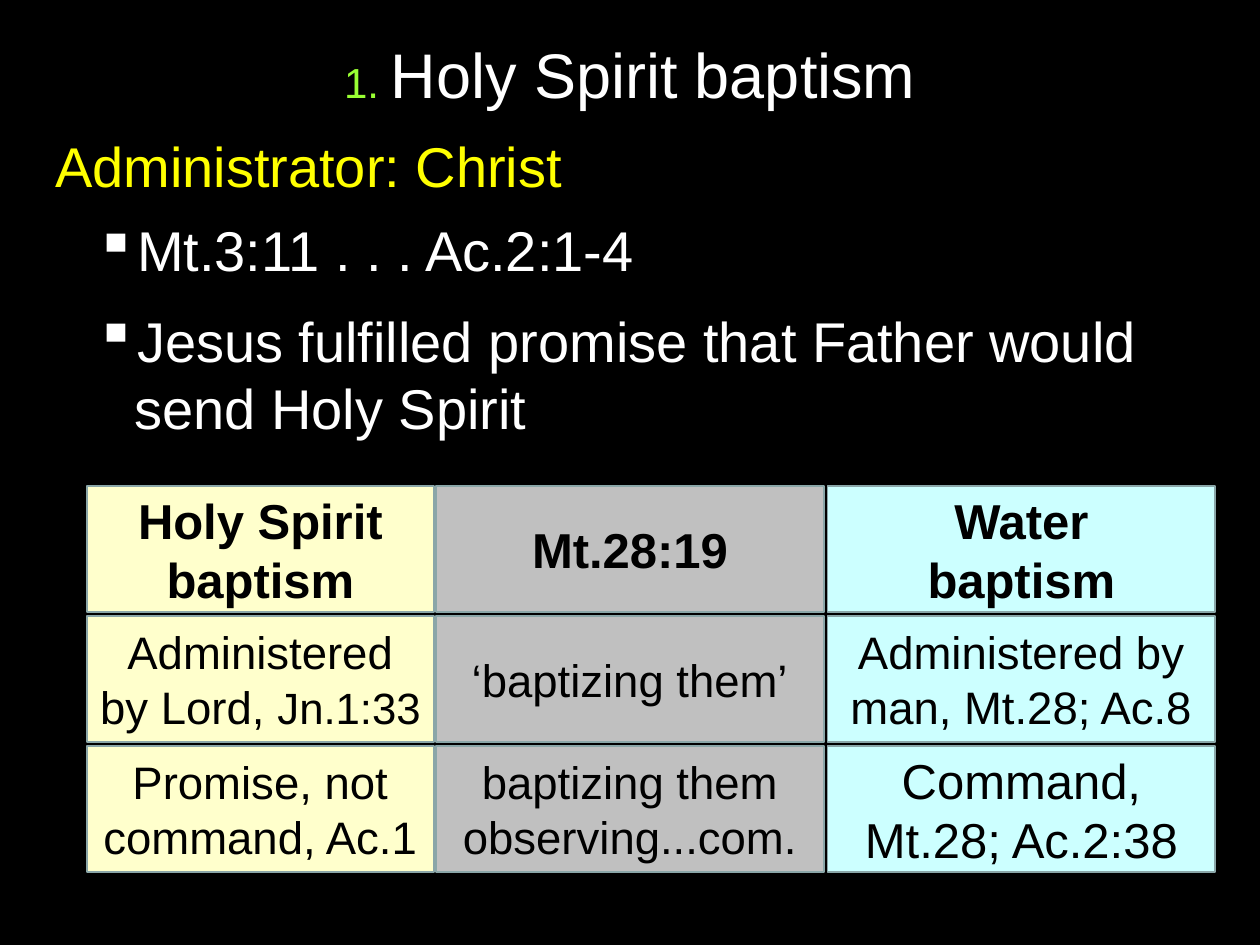
"""Build a slide on Holy Spirit baptism compared with water baptism."""
from lxml import etree
from pptx import Presentation
from pptx.dml.color import RGBColor
from pptx.enum.shapes import MSO_SHAPE
from pptx.enum.text import MSO_ANCHOR, PP_ALIGN
from pptx.oxml.ns import qn
from pptx.util import Cm, Pt

RECT = MSO_SHAPE.RECTANGLE
MIDDLE, TOP = MSO_ANCHOR.MIDDLE, MSO_ANCHOR.TOP
CENTER, LEFT = PP_ALIGN.CENTER, PP_ALIGN.LEFT

BLACK, WHITE, YELLOW, GREEN = "000000", "FFFFFF", "FFFF00", "99FF33"
BORDER = "8AA6A8"
COLUMNS = [(1.75, 7, "FFFFCC"), (8.79, 7.82, "C0C0C0"), (16.68, 7.82, "CCFFFF")]
FIRST_ROW, ROW_STEP, ROW_HEIGHT = 9.8, 2.62, 2.54

HEAD = {"size": Pt(28), "bold": True}
CELL = {"size": Pt(26)}
ROWS = [
    [[[("Holy Spirit baptism", HEAD)]],
     [[("Mt.28:19", HEAD)]],
     [[("Water\vbaptism", HEAD)]]],
    [[[("Administered by Lord, ", CELL), ("Jn.1:33", {"size": Pt(25)})]],
     [[("‘baptizing them’", CELL)]],
     [[("Administered by man, Mt.28; Ac.8", CELL)]]],
    [[[("Promise, not command, Ac.1", CELL)]],
     [[("baptizing them", CELL)], [("observing...com.", CELL)]],
     [[("Command, Mt.28; Ac.2:38", {"size": Pt(28)})]]],
]


def rgb(value):
    return RGBColor.from_string(value)


class Deck:
    def __init__(self, prs, font="Arial"):
        self.font = font
        self.s = prs.slides.add_slide(prs.slide_layouts[6])

    def background(self, color):
        fill = self.s.background.fill
        fill.solid()
        fill.fore_color.rgb = rgb(color)

    def add_runs(self, p, runs, color):
        for text, fmt in runs:
            for i, part in enumerate(text.split("\v")):
                if i:
                    p.add_line_break()
                r = p.add_run()
                r.text = part
                values = {"name": self.font, **fmt}
                r.font.color.rgb = rgb(values.pop("color", color))
                for name, value in values.items():
                    setattr(r.font, name, value)

    def fill_text(self, tf, paragraphs, color, align, anchor):
        tf.word_wrap = True
        tf.vertical_anchor = anchor
        for i, runs in enumerate(paragraphs):
            p = tf.add_paragraph() if i else tf.paragraphs[0]
            p.alignment = align
            self.add_runs(p, runs, color)
        return tf

    def text(self, box, paragraphs, color, align=LEFT, anchor=TOP):
        sp = self.s.shapes.add_textbox(*map(Cm, box))
        return self.fill_text(sp.text_frame, paragraphs, color, align, anchor)

    def bullet(self, p, char, margin, hanging):
        pPr = p._p.get_or_add_pPr()
        pPr.set("marL", str(Cm(margin)))
        pPr.set("indent", str(-Cm(hanging)))
        etree.SubElement(pPr, qn("a:buChar")).set("char", char)

    def cell(self, box, paragraphs, fill):
        sp = self.s.shapes.add_shape(RECT, *map(Cm, box))
        sp.shadow.inherit = False
        sp.fill.solid()
        sp.fill.fore_color.rgb = rgb(fill)
        sp.line.color.rgb = rgb(BORDER)
        sp.line.width = Pt(1)
        self.fill_text(sp.text_frame, paragraphs, BLACK, CENTER, MIDDLE)


def main():
    prs = Presentation()
    prs.slide_width, prs.slide_height = Cm(25.4), Cm(19.05)
    deck = Deck(prs)
    deck.background(BLACK)

    title = [("1. ", {"size": Pt(24), "color": GREEN}),
             ("Holy Spirit baptism", {"size": Pt(36)})]
    deck.text((1.27, 0.2, 22.86, 2.54), [title], WHITE, CENTER, MIDDLE)

    body = {"size": Pt(32)}
    tf = deck.text((0.86, 2.53, 23.67, 6.8), [
        [("Administrator: Christ", {**body, "color": YELLOW})],
        [("Mt.3:11 . . . Ac.2:1-4", body)],
        [("Jesus fulfilled promise that Father would send Holy Spirit", body)],
    ], WHITE)
    heading, *points = tf.paragraphs
    heading.space_after = Pt(2)
    for p in points:
        for name, value in {"space_before": Pt(7.4), "space_after": Pt(6)}.items():
            setattr(p, name, value)
        deck.bullet(p, "▪", 1.6, 0.79)

    for i, row in enumerate(ROWS):
        top = FIRST_ROW + i * ROW_STEP
        for (left, width, fill), paragraphs in zip(COLUMNS, row):
            deck.cell((left, top, width, ROW_HEIGHT), paragraphs, fill)

    prs.save("out.pptx")


if __name__ == "__main__":
    main()
